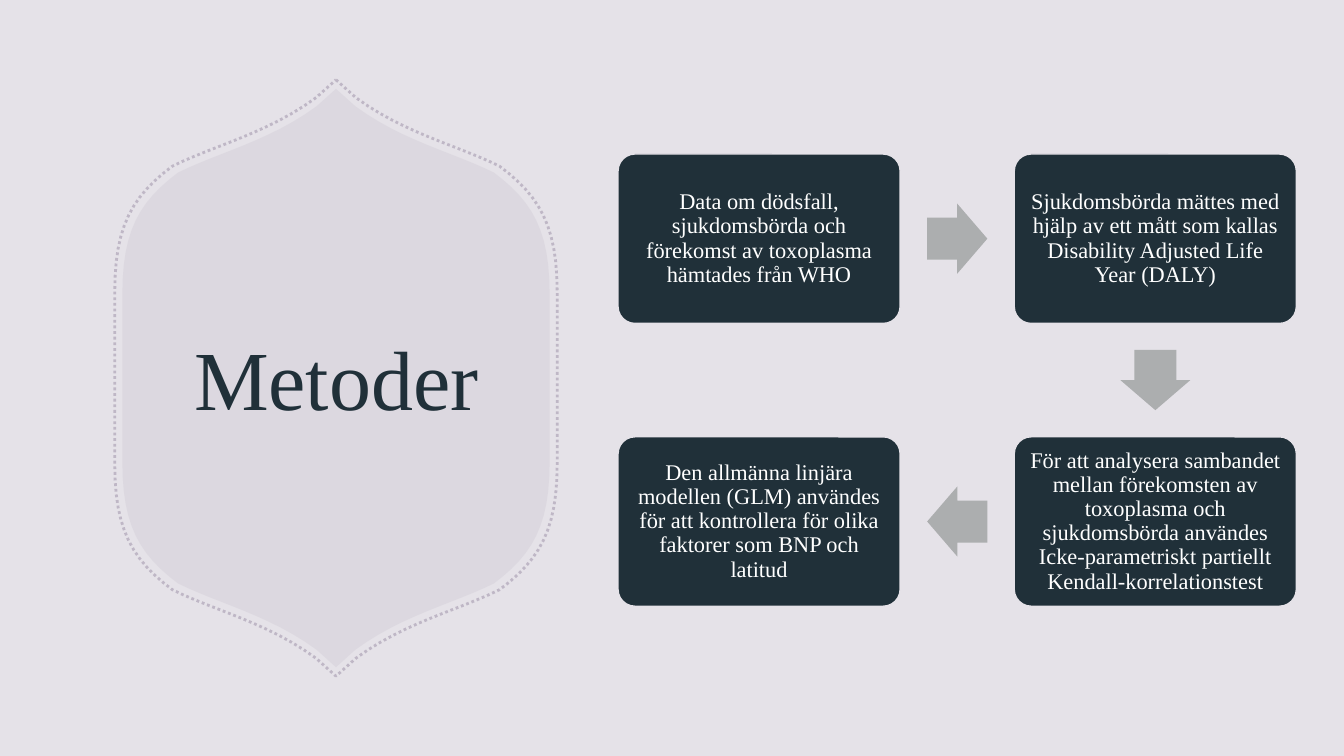
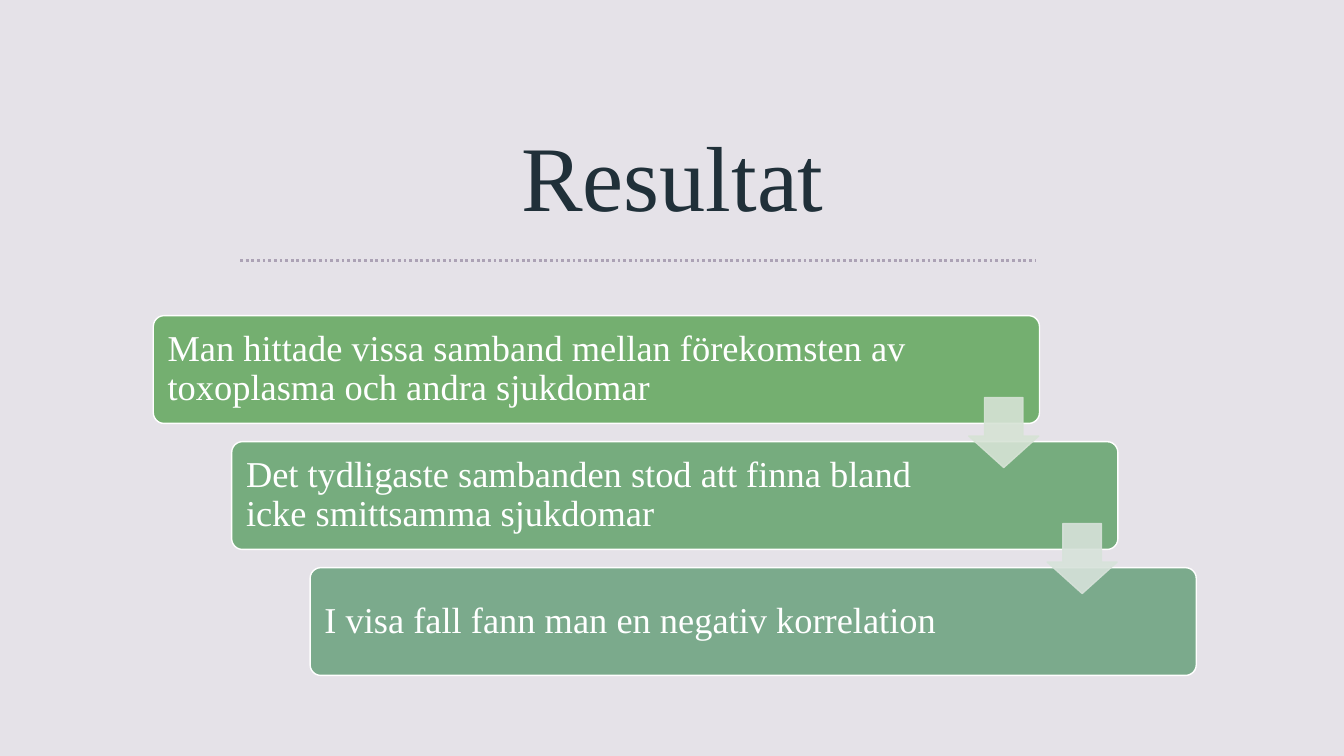
from dataclasses import dataclass
from itertools import pairwise

from lxml import etree
from pptx import Presentation
from pptx import util as u
from pptx.dml.color import RGBColor as Rgb
from pptx.enum import dml, shapes, text
from pptx.oxml import ns

Pt = u.Pt
Kind = shapes.MSO_SHAPE
Align = text.PP_ALIGN


@dataclass(frozen=True)
class Theme:
    """Colours and type sizes."""
    font: str = "Times New Roman"
    paper: str = "E5E2E8"
    ink: str = "203039"
    white: str = "FFFFFF"
    mauve: str = "ACA2B5"
    grey: str = "ACAEAF"
    steps: tuple = ("74AF70", "76AC7E", "7BAA8C")
    tints: tuple = ("D6E3D5", "D7E2DA")
    large: int = 66
    head: int = 60
    step: int = 26
    body: int = 16


# Upper right quarter of the shield, as shares of its half width and height
TIP = (0, 1)
NECK = (0.09, 0.94)
CURVES = (((0.31, 0.82), (0.55, 0.78), (0.74, 0.71)),
          ((0.92, 0.61), (1, 0.51), (1, 0.29)))


def quarter(count=12):
    """Trace the quarter, from the tip to the side."""
    dots = [TIP, NECK]
    for b, c, d in CURVES:
        a = dots[-1]
        for i in range(1, count + 1):
            t = i / count
            r = 1 - t
            dots.append(tuple(
                r**3 * a[k] + 3 * r * r * t * b[k] + 3 * r * t * t * c[k] + t**3 * d[k]
                for k in (0, 1)))
    return dots


def outline():
    """Mirror the quarter into the whole closed outline."""
    right = quarter()
    right += [(x, -y) for x, y in reversed(right)]
    return right + [(-x, y) for x, y in reversed(right[1:-1])]


class Deck:
    def __init__(self, theme):
        self.theme = theme
        self.prs = Presentation()
        self.prs.slide_width, self.prs.slide_height = Pt(960), Pt(540)
        self.page = None

    def start(self):
        """Add a title-only slide on the paper colour."""
        self.page = self.prs.slides.add_slide(self.prs.slide_layouts[5])
        fill = self.page.background.fill
        fill.solid()
        fill.fore_color.rgb = Rgb.from_string(self.theme.paper)

    def paint(self, shape, fill=None, line=None, width=1, alpha=None):
        shape.shadow.inherit = False
        if fill:
            shape.fill.solid()
            shape.fill.fore_color.rgb = Rgb.from_string(fill)
        else:
            shape.fill.background()
        if line:
            self.stroke(shape.line, line, width)
        else:
            shape.line.fill.background()
        if alpha:
            for node in shape.element.iter(ns.qn("a:srgbClr")):
                etree.SubElement(node, ns.qn("a:alpha"), val=str(alpha * 1000))

    def stroke(self, line, color, width):
        line.color.rgb = Rgb.from_string(color)
        line.width = Pt(width)

    def label(self, frame, words, size, color, align):
        frame.text = words
        frame.word_wrap = True
        frame.auto_size = text.MSO_AUTO_SIZE.NONE
        frame.vertical_anchor = text.MSO_ANCHOR.MIDDLE
        for para in frame.paragraphs:
            para.alignment = align
            for run in para.runs:
                run.font.name = self.theme.font
                run.font.size = Pt(size)
                run.font.color.rgb = Rgb.from_string(color)

    def title(self, words, x, y, w, h, size):
        """Place the title in front of what is already drawn."""
        shape = self.page.shapes.title
        shape.left, shape.top, shape.width, shape.height = map(Pt, (x, y, w, h))
        self.label(shape.text_frame, words, size, self.theme.ink, Align.CENTER)
        shape.element.getparent().append(shape.element)

    def card(self, words, x, y, w, h, fill, line, size, align, pad, room=0):
        """Draw a rounded box; room is extra space right of the text."""
        shape = self.page.shapes.add_shape(
            Kind.ROUNDED_RECTANGLE, *map(Pt, (x, y, w, h)))
        shape.adjustments[0] = 0.1
        self.paint(shape, fill, line)
        frame = shape.text_frame
        self.label(frame, words, size, self.theme.white, align)
        frame.margin_left = frame.margin_top = frame.margin_bottom = Pt(pad)
        frame.margin_right = Pt(pad + room)
        frame.paragraphs[0].line_spacing = 0.9

    def arrow(self, kind, x, y, w, h, fill, shaft, point, turn=0, **look):
        shape = self.page.shapes.add_shape(kind, *map(Pt, (x, y, w, h)))
        shape.adjustments[0], shape.adjustments[1] = shaft, point
        shape.rotation = turn
        self.paint(shape, fill, **look)

    def shield(self, x, y, half, rise, **look):
        """Draw a shield around the centre x, y."""
        dots = [(Pt(x + half * a), Pt(y - rise * b)) for a, b in outline()]
        form = self.page.shapes.build_freeform(*dots[0])
        form.add_line_segments(dots[1:], close=True)
        shape = form.convert_to_shape()
        self.paint(shape, **look)
        return shape

    def rule(self, x, y, end):
        line = self.page.shapes.add_connector(
            shapes.MSO_CONNECTOR.STRAIGHT, *map(Pt, (x, y, end, y)))
        self.stroke(line.line, self.theme.mauve, 2)
        line.line.dash_style = dml.MSO_LINE.ROUND_DOT
        etree.SubElement(line.element.spPr, ns.qn("a:effectLst"))


def methods(deck):
    th = deck.theme
    deck.start()

    # Shield with the title
    deck.shield(240, 270, 152.6, 206.6, fill=th.mauve, alpha=15)
    edge = deck.shield(240, 270, 158, 213, line=th.mauve, width=2, alpha=65)
    edge.line.dash_style = dml.MSO_LINE.ROUND_DOT
    deck.title("Metoder", 115, 152, 250.5, 235, th.head)

    # Four boxes, clockwise from the upper left
    w, h = 201.5, 121
    cells = ((0, 0), (1, 0), (1, 1), (0, 1))
    spots = [(441.5 + 283 * col, 110 + 202 * row) for col, row in cells]
    notes = (
        "Data om dödsfall, sjukdomsbörda och förekomst av toxoplasma hämtades från WHO",
        "Sjukdomsbörda mättes med hjälp av ett mått som kallas "
        "Disability Adjusted Life Year (DALY)",
        "För att analysera sambandet mellan förekomsten av toxoplasma och "
        "sjukdomsbörda användes Icke-parametriskt partiellt Kendall-korrelationstest",
        "Den allmänna linjära modellen (GLM) användes för att kontrollera "
        "för olika faktorer som BNP och latitud",
    )
    for words, (x, y) in zip(notes, spots):
        deck.card(words, x, y, w, h, th.ink, th.paper, th.body, Align.CENTER, 5)

    # Arrows halfway between neighbours
    aw, ah = 43, 50
    for i, ((x, y), (nx, ny)) in enumerate(pairwise(spots)):
        deck.arrow(Kind.RIGHT_ARROW, (x + nx + w - aw) / 2, (y + ny + h - ah) / 2,
                   aw, ah, th.grey, 0.6, 0.5, turn=90 * i)


def results(deck):
    th = deck.theme
    deck.start()

    # Title and rule
    deck.title("Resultat", 75.5, 74, 810, 101, th.large)
    deck.rule(171.5, 186, 739.5)

    # Staircase of boxes
    left, top, dx, dy = 109.5, 225.5, 56, 90
    notes = (
        ("Man hittade vissa samband mellan förekomsten av toxoplasma och andra sjukdomar", 80),
        ("Det tydligaste sambanden stod att finna bland icke smittsamma sjukdomar", 107),
        ("I visa fall fann man en negativ korrelation", 107),
    )
    for i, ((words, room), fill) in enumerate(zip(notes, th.steps)):
        deck.card(words, left + dx * i, top + dy * i, 633, 77, fill, th.white,
                  th.step, Align.LEFT, 8, room)

    # Arrows from step to step
    for i, tint in enumerate(th.tints):
        deck.arrow(Kind.DOWN_ARROW, left + 582.5 + dx * i, top + 58.5 + dy * i,
                   50, 50, tint, 0.55, 0.45, line=tint, alpha=90)


def main():
    deck = Deck(Theme())
    methods(deck)
    results(deck)
    deck.prs.save("out.pptx")


if __name__ == "__main__":
    main()
